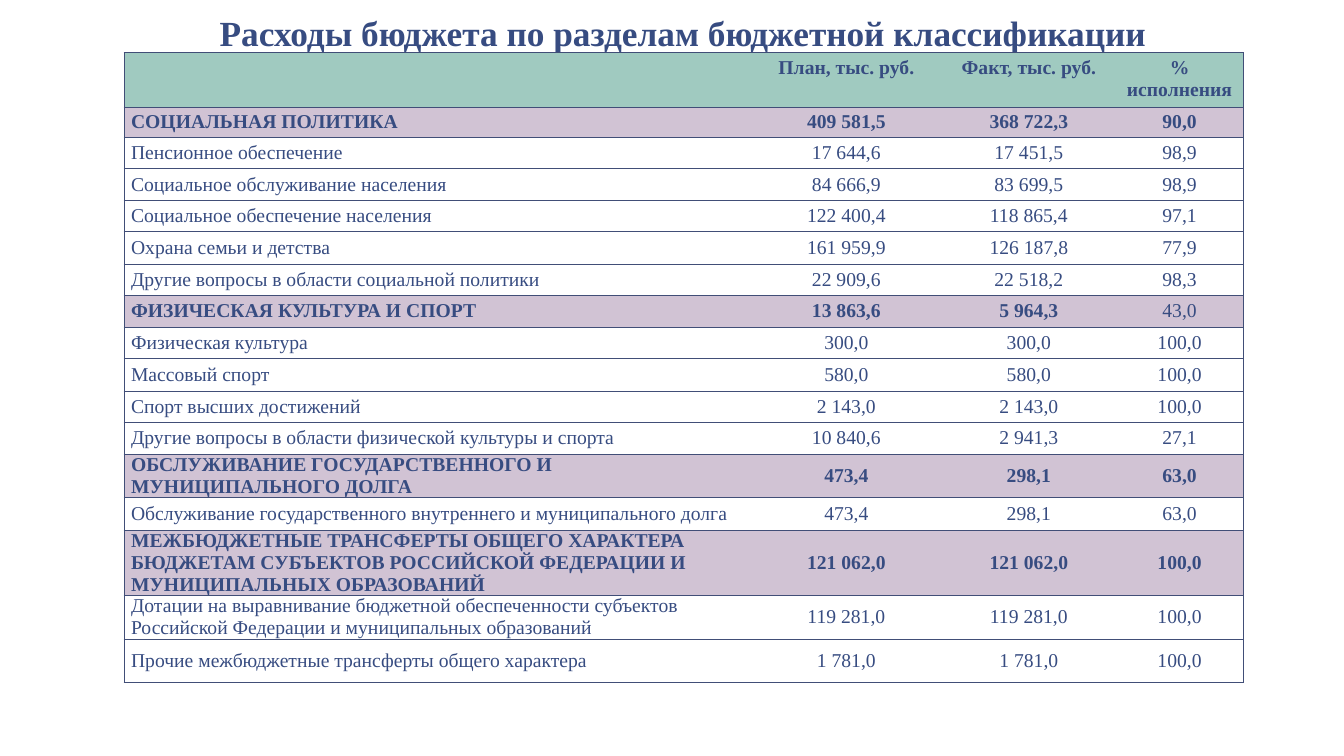
from lxml import etree
from pptx import Presentation
from pptx.dml.color import RGBColor
from pptx.enum.text import MSO_ANCHOR, MSO_AUTO_SIZE, PP_ALIGN
from pptx.oxml.ns import qn
from pptx.util import Inches, Pt

FONT = "Times New Roman"
TEXT_COLOR = RGBColor(0x37, 0x4C, 0x81)
BORDER_COLOR = RGBColor(0x41, 0x4E, 0x77)
HEADER_FILL = RGBColor(0xA0, 0xCA, 0xC0)
SECTION_FILL = RGBColor(0xD1, 0xC3, 0xD4)
CENTER = PP_ALIGN.CENTER
LEFT = PP_ALIGN.LEFT
MIDDLE = MSO_ANCHOR.MIDDLE
BOTTOM = MSO_ANCHOR.BOTTOM
NO_AUTOFIT = MSO_AUTO_SIZE.NONE

COLUMN_WIDTHS = [6.22, 1.89, 1.73, 1.26]
ROW_HEIGHTS = [0.54, 0.3] + [0.31, 0.32] * 5 + [0.43, 0.32, 0.65, 0.43, 0.43]
BUDGET_ROWS = [
    ("", "План, тыс. руб.", "Факт, тыс. руб.", "% исполнения"),
    ("СОЦИАЛЬНАЯ ПОЛИТИКА", "409 581,5", "368 722,3", "90,0"),
    ("Пенсионное обеспечение", "17 644,6", "17 451,5", "98,9"),
    ("Социальное обслуживание населения", "84 666,9", "83 699,5", "98,9"),
    ("Социальное обеспечение населения", "122 400,4", "118 865,4", "97,1"),
    ("Охрана семьи и детства", "161 959,9", "126 187,8", "77,9"),
    ("Другие вопросы в области социальной политики", "22 909,6", "22 518,2", "98,3"),
    ("ФИЗИЧЕСКАЯ КУЛЬТУРА И СПОРТ", "13 863,6", "5 964,3", "43,0"),
    ("Физическая культура", "300,0", "300,0", "100,0"),
    ("Массовый спорт", "580,0", "580,0", "100,0"),
    ("Спорт высших достижений", "2 143,0", "2 143,0", "100,0"),
    ("Другие вопросы в области физической культуры и спорта", "10 840,6", "2 941,3", "27,1"),
    ("ОБСЛУЖИВАНИЕ ГОСУДАРСТВЕННОГО И МУНИЦИПАЛЬНОГО ДОЛГА", "473,4", "298,1", "63,0"),
    ("Обслуживание государственного внутреннего и муниципального долга",
     "473,4", "298,1", "63,0"),
    ("МЕЖБЮДЖЕТНЫЕ ТРАНСФЕРТЫ ОБЩЕГО ХАРАКТЕРА БЮДЖЕТАМ СУБЪЕКТОВ "
     "РОССИЙСКОЙ ФЕДЕРАЦИИ И МУНИЦИПАЛЬНЫХ ОБРАЗОВАНИЙ",
     "121 062,0", "121 062,0", "100,0"),
    ("Дотации на выравнивание бюджетной обеспеченности субъектов "
     "Российской Федерации и муниципальных образований",
     "119 281,0", "119 281,0", "100,0"),
    ("Прочие межбюджетные трансферты общего характера", "1 781,0", "1 781,0", "100,0"),
]
LAST_COLUMN = len(COLUMN_WIDTHS) - 1
REGULAR_SECTION_CELL = ("ФИЗИЧЕСКАЯ КУЛЬТУРА И СПОРТ", LAST_COLUMN)


def format_font(font, size, bold):
    font.name = FONT
    font.size = Pt(size)
    font.bold = bold
    font.color.rgb = TEXT_COLOR


def set_borders(cell, visible_sides):
    properties = cell._tc.get_or_add_tcPr()
    for side in ("lnL", "lnR", "lnT", "lnB"):
        line = etree.SubElement(properties, qn(f"a:{side}"), w=str(Pt(0.5)))
        if side in visible_sides:
            fill = etree.SubElement(line, qn("a:solidFill"))
            etree.SubElement(fill, qn("a:srgbClr"), val=str(BORDER_COLOR))
        else:
            etree.SubElement(line, qn("a:noFill"))


presentation = Presentation()
presentation.slide_width = Inches(13.33)
presentation.slide_height = Inches(7.5)
slide = presentation.slides.add_slide(presentation.slide_layouts[5])

title = slide.shapes.title
title.left, title.top = Inches(1.22), Inches(0.08)
title.width, title.height = Inches(11.11), Inches(0.52)
title_frame = title.text_frame
title_frame.text = "Расходы бюджета по разделам бюджетной классификации"
title_frame.word_wrap = True
title_frame.auto_size = NO_AUTOFIT
title_frame.vertical_anchor = BOTTOM
title_frame.margin_left = title_frame.margin_right = Inches(0.13)
title_frame.margin_top = title_frame.margin_bottom = Inches(0.07)
title_paragraph = title_frame.paragraphs[0]
title_paragraph.alignment = CENTER
title_paragraph.line_spacing = 0.85
format_font(title_paragraph.runs[0].font, 25.2, True)

table = slide.shapes.add_table(
    len(BUDGET_ROWS), len(COLUMN_WIDTHS), Inches(1.23), Inches(0.52),
    Inches(sum(COLUMN_WIDTHS)), Inches(sum(ROW_HEIGHTS)),
).table
table.first_row = False
table.horz_banding = False
for column, width in zip(table.columns, COLUMN_WIDTHS):
    column.width = Inches(width)
for row, height in zip(table.rows, ROW_HEIGHTS):
    row.height = Inches(height)

for row_index, values in enumerate(BUDGET_ROWS):
    name = values[0]
    is_header = row_index == 0
    is_section = name.isupper()
    for column_index, value in enumerate(values):
        cell = table.cell(row_index, column_index)
        visible_sides = ["lnT", "lnB"]
        if column_index == 0:
            visible_sides.append("lnL")
        if column_index == LAST_COLUMN:
            visible_sides.append("lnR")
        set_borders(cell, visible_sides)
        if is_header or is_section:
            cell.fill.solid()
            cell.fill.fore_color.rgb = HEADER_FILL if is_header else SECTION_FILL
        else:
            cell.fill.background()
        if not is_header:
            cell.vertical_anchor = MIDDLE
            cell.margin_left = cell.margin_right = Inches(0.07)
            cell.margin_top = cell.margin_bottom = 0
        cell.text_frame.text = value
        paragraph = cell.text_frame.paragraphs[0]
        paragraph.alignment = CENTER if column_index else LEFT
        bold = (is_header or is_section) and (name, column_index) != REGULAR_SECTION_CELL
        for run in paragraph.runs:
            format_font(run.font, 14, bold)

presentation.save("out.pptx")
